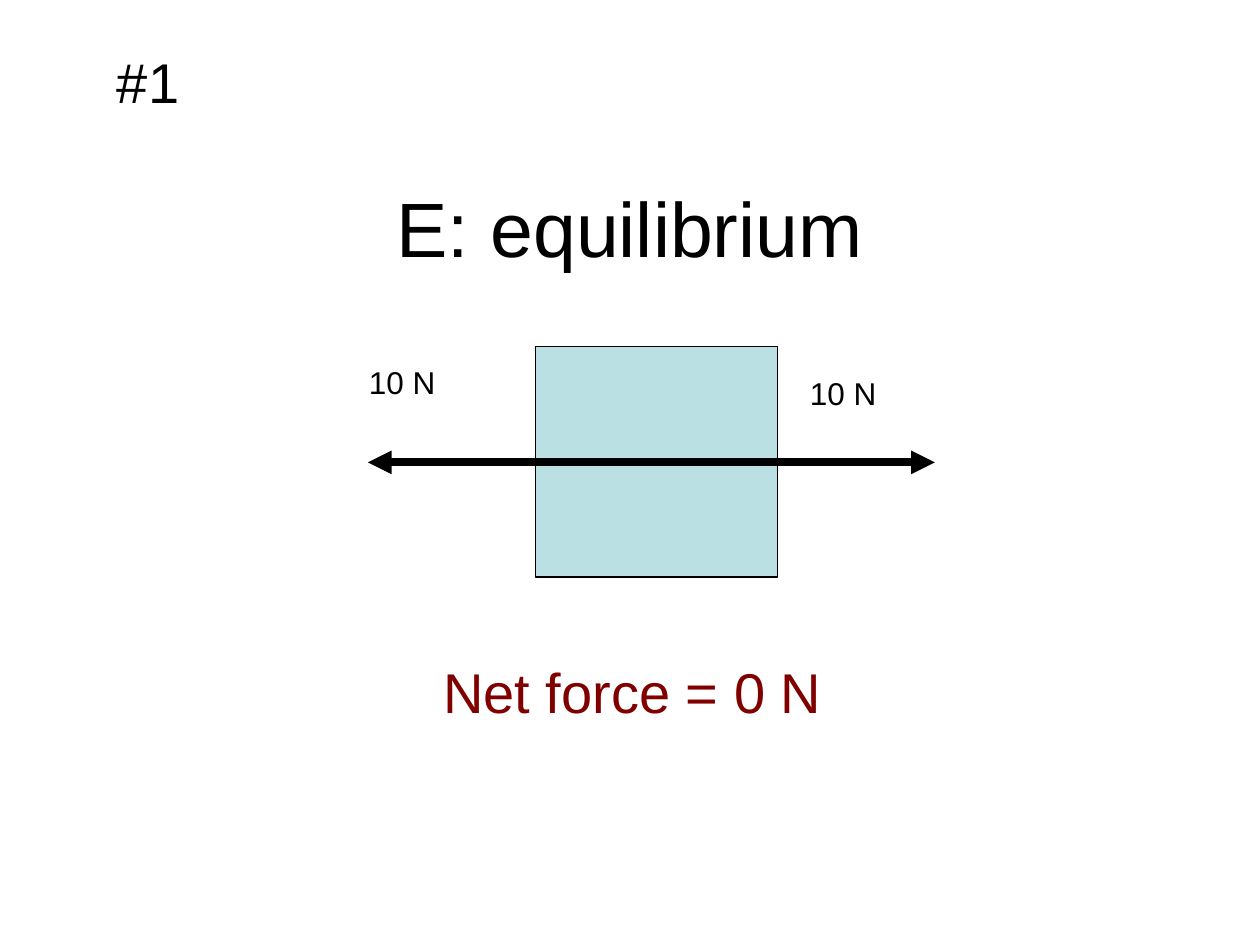
from lxml import etree
from pptx import Presentation
from pptx.dml.color import RGBColor
from pptx.enum.shapes import MSO_CONNECTOR, MSO_SHAPE
from pptx.enum.text import MSO_ANCHOR, PP_ALIGN
from pptx.oxml.ns import qn
from pptx.util import Inches, Pt

STRAIGHT = MSO_CONNECTOR.STRAIGHT
RECTANGLE = MSO_SHAPE.RECTANGLE
TOP, MIDDLE = MSO_ANCHOR.TOP, MSO_ANCHOR.MIDDLE
LEFT, CENTER = PP_ALIGN.LEFT, PP_ALIGN.CENTER

FONT = "Arial"
COLORS = {"black": "000000", "block": "BBE0E3", "result": "800000", "paper": "FFFFFF"}


class ForceSlide:
    def __init__(self, deck):
        self.slide = deck.slides.add_slide(deck.slide_layouts[6])
        fill = self.slide.background.fill
        fill.solid()
        fill.fore_color.rgb = self.color("paper")

    def color(self, name):
        return RGBColor.from_string(COLORS[name])

    def text(self, words, left, top, width, height, size,
             color="black", align=LEFT, anchor=TOP):
        box = self.slide.shapes.add_textbox(
            Inches(left), Inches(top), Inches(width), Inches(height))
        frame = box.text_frame
        frame.word_wrap = True
        frame.vertical_anchor = anchor
        frame.text = words
        para = frame.paragraphs[0]
        para.alignment = align
        font = para.runs[0].font
        font.name = FONT
        font.size = Pt(size)
        font.color.rgb = self.color(color)

    def block(self, left, top, width, height):
        block = self.slide.shapes.add_shape(
            RECTANGLE, Inches(left), Inches(top), Inches(width), Inches(height))
        block.shadow.inherit = False
        block.fill.solid()
        block.fill.fore_color.rgb = self.color("block")
        block.line.color.rgb = self.color("black")
        block.line.width = Pt(0.75)

    def arrow(self, x, y, reach):
        arrow = self.slide.shapes.add_connector(
            STRAIGHT, Inches(x), Inches(y), Inches(x + reach), Inches(y))
        arrow.line.color.rgb = self.color("black")
        arrow.line.width = Pt(4.5)
        etree.SubElement(arrow.line._get_or_add_ln(), qn("a:tailEnd"), type="triangle")
        etree.SubElement(arrow._element.spPr, qn("a:effectLst"))


def main():
    deck = Presentation()
    deck.slide_width, deck.slide_height = Inches(10), Inches(7.5)
    page = ForceSlide(deck)

    page.text("E: equilibrium", 0.5, 1.17, 9, 1.25, 44, align=CENTER, anchor=MIDDLE)
    page.block(4.25, 2.75, 1.92, 1.83)
    for reach in (2.25, -2.25):
        page.arrow(5.17, 3.67, reach)
    for left, top in ((2.83, 2.83), (6.33, 2.92)):
        page.text("10 N", left, top, 1, 0.4, 18)
    page.text("#1", 0.83, 0.33, 1.08, 0.63, 32)
    page.text("Net force = 0 N", 3.42, 5.17, 5.33, 0.63, 32, color="result")

    deck.save("out.pptx")


if __name__ == "__main__":
    main()
